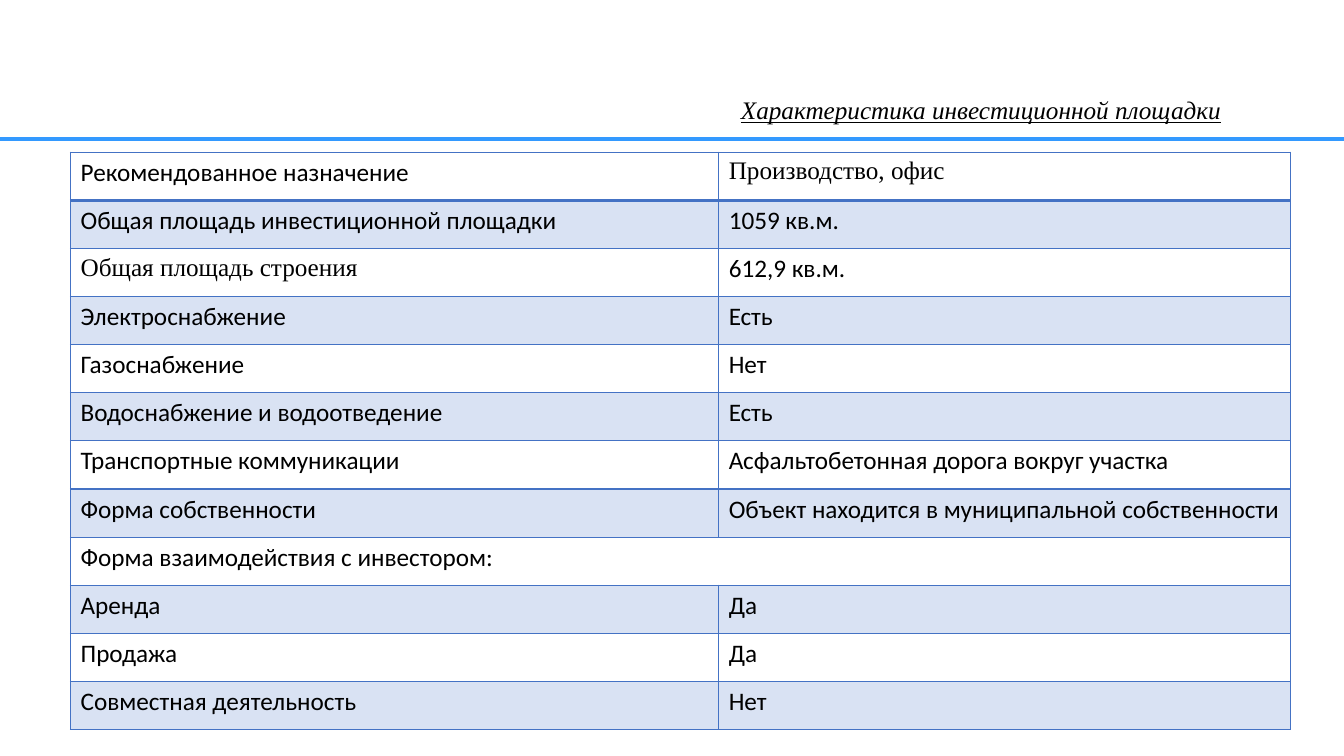
from lxml.etree import SubElement
from pptx import Presentation
from pptx.dml.color import RGBColor
from pptx.enum.shapes import MSO_CONNECTOR as Connector
from pptx.enum.text import MSO_ANCHOR as Anchor, PP_ALIGN as Align
from pptx.oxml import parse_xml
from pptx.oxml.ns import nsdecls, qn
from pptx.util import Pt

SLIDE_W, SLIDE_H = 960, 540
SANS, SERIF = "Calibri", "Times New Roman"
BLACK, RULE_BLUE, TABLE_BLUE = "000000", "3399FF", "4472C4"

SITE_FACTS = [
    ("Рекомендованное назначение", "Производство, офис"),
    ("Общая площадь инвестиционной площадки", "1059 кв.м."),
    ("Общая площадь строения", "612,9 кв.м."),
    ("Электроснабжение", "Есть"),
    ("Газоснабжение", "Нет"),
    ("Водоснабжение и водоотведение", "Есть"),
    ("Транспортные коммуникации", "Асфальтобетонная дорога вокруг участка"),
    ("Форма собственности", "Объект находится в муниципальной собственности"),
    ("Форма взаимодействия с инвестором:", None),
    ("Аренда", "Да"),
    ("Продажа", "Да"),
    ("Совместная деятельность", "Нет"),
]
SERIF_ENTRIES = {"Производство, офис", "Общая площадь строения"}


def color(hex_code):
    return RGBColor.from_string(hex_code)


def write(frame, text, font=SANS, size=18, ink=BLACK, italic=False,
          underline=False, align=Align.LEFT, spacing=1.0):
    paragraph = frame.paragraphs[0]
    paragraph.alignment = align
    paragraph.line_spacing = spacing
    run = paragraph.add_run()
    run.text = text
    run.font.name = font
    run.font.size = Pt(size)
    run.font.color.rgb = color(ink)
    run.font.italic = italic
    run.font.underline = underline


def draw_borders(cell, bottom):
    widths = {"lnL": 1, "lnR": 1, "lnT": 1, "lnB": bottom}
    properties = cell._tc.get_or_add_tcPr()
    for position, (side, width) in enumerate(widths.items()):
        properties.insert(position, parse_xml(
            f'<a:{side} {nsdecls("a")} w="{Pt(width)}"><a:solidFill>'
            f'<a:srgbClr val="{TABLE_BLUE}"/></a:solidFill></a:{side}>'))


def shade(cell, banded):
    if not banded:
        cell.fill.background()
        return
    cell.fill.solid()
    cell.fill.fore_color.rgb = color(TABLE_BLUE)
    tint = cell._tc.tcPr.find(qn("a:solidFill")).find(qn("a:srgbClr"))
    SubElement(tint, qn("a:alpha"), val="20000")


def add_header(slide, left, top, width, height):
    # Rule along the bottom edge
    bottom = Pt(top + height)
    rule = slide.shapes.add_connector(
        Connector.STRAIGHT, Pt(left), bottom, Pt(left + width), bottom)
    rule.line.color.rgb = color(RULE_BLUE)
    rule.line.width = Pt(3.5)
    SubElement(rule._element.spPr, qn("a:effectLst"))

    # Title in the right half
    title = slide.shapes.add_textbox(
        Pt(left + width / 2), Pt(top + height - 29.5), Pt(441.6), Pt(19.6))
    frame = title.text_frame
    frame.word_wrap = True
    frame.vertical_anchor = Anchor.MIDDLE
    frame.margin_top = frame.margin_bottom = 0
    write(frame, "Характеристика инвестиционной площадки", font=SERIF,
          italic=True, underline=True, align=Align.CENTER, spacing=0.9)


def add_site_table(slide, left, top, width, height):
    table = slide.shapes.add_table(
        len(SITE_FACTS), 2, Pt(left), Pt(top), Pt(width), Pt(height)).table
    table.first_row = table.horz_banding = False
    label_width = 463
    table.columns[0].width = Pt(label_width)
    table.columns[1].width = Pt(width - label_width)

    for index, facts in enumerate(SITE_FACTS):
        table.rows[index].height = Pt(height / len(SITE_FACTS))
        for column, fact in enumerate(facts):
            cell = table.cell(index, column)
            shade(cell, banded=index % 2 == 1)
            draw_borders(cell, bottom=2 if index == 0 else 1)
            if fact:
                write(cell.text_frame, fact,
                      font=SERIF if fact in SERIF_ENTRIES else SANS)
        # A heading without a value spans both columns
        if facts[1] is None:
            table.cell(index, 0).merge(table.cell(index, 1))


def main():
    deck = Presentation()
    deck.slide_width, deck.slide_height = Pt(SLIDE_W), Pt(SLIDE_H)
    slide = deck.slides.add_slide(deck.slide_layouts[6])
    add_header(slide, 0, 0, SLIDE_W, 99.3)
    add_site_table(slide, 50.4, 108.8, 871.2, 412.5)
    deck.save("out.pptx")


if __name__ == "__main__":
    main()
